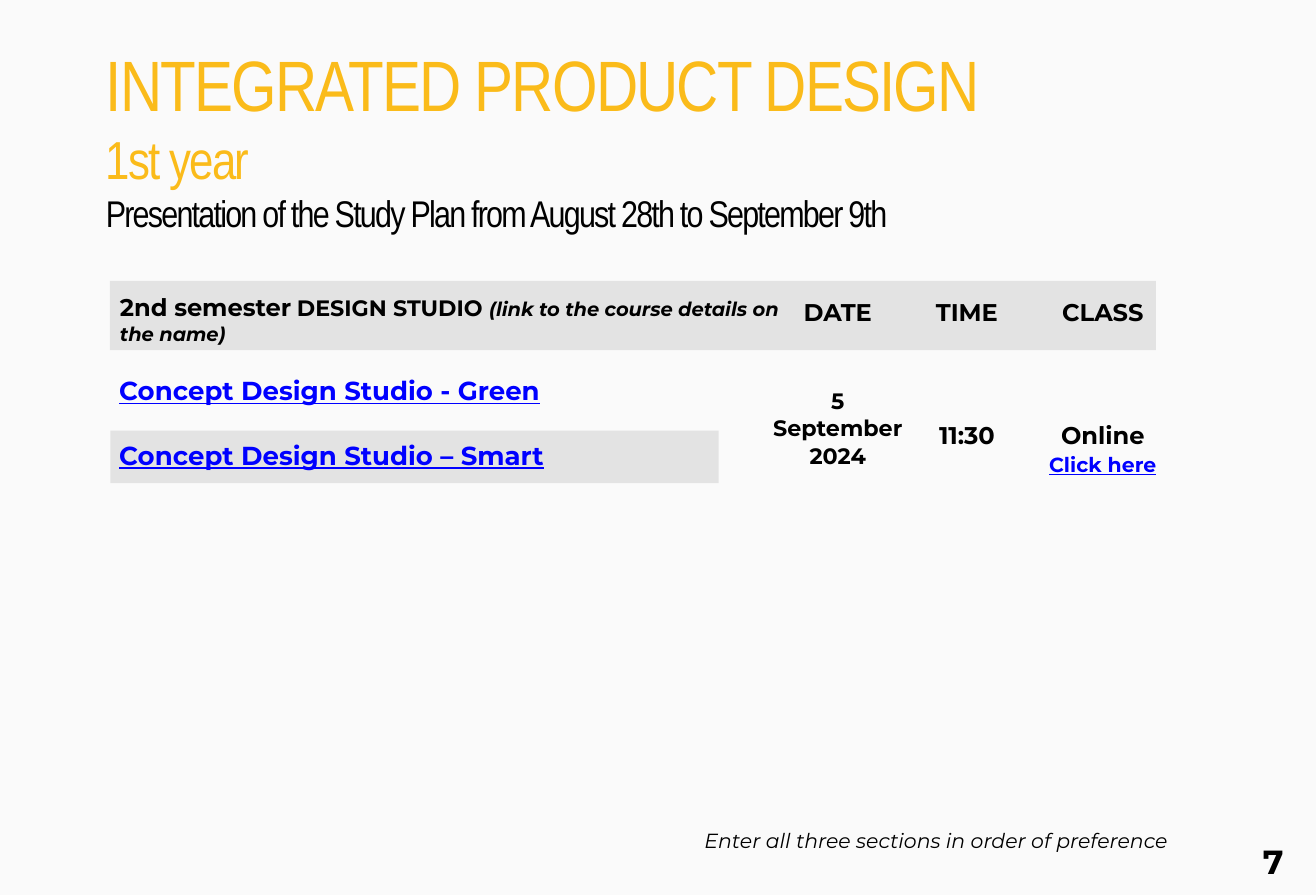
import pptx
import pptx.dml.color
import pptx.enum.shapes
import pptx.enum.text
import pptx.util
from dataclasses import dataclass, field

Align = pptx.enum.text.PP_ALIGN
Anchor = pptx.enum.text.MSO_ANCHOR


# Colours, fonts and type sizes
@dataclass(frozen=True)
class Theme:
    paper: str = "FAFAFA"
    band: str = "E3E3E3"
    gold: str = "FABB1A"
    ink: str = "000000"
    link: str = "0000FF"
    head: str = "Arial Narrow"
    body: str = "Montserrat"
    title: float = 38.4
    year: float = 28.8
    plan: float = 20
    page: float = 18
    course: float = 14
    label: float = 13
    text: float = 12
    small: float = 11
    hint: float = 10.5


THEME = Theme()


# Boxes are left, top, width, height in percent of the slide
@dataclass
class Box:
    left: float
    top: float
    width: float
    height: float


@dataclass
class Run:
    text: str
    size: float
    color: str = THEME.ink
    font: str = THEME.body
    form: dict = field(default_factory=lambda: {"bold": True})
    track: int = 0
    split: bool = False


@dataclass
class Para:
    runs: list[Run]
    before: float = 1


@dataclass
class Block:
    box: Box
    paras: list[Para]
    align: Align = Align.LEFT
    anchor: Anchor = Anchor.TOP


deck = pptx.Presentation()
deck.slide_width = pptx.util.Pt(709)
deck.slide_height = pptx.util.Pt(482)
slide = deck.slides.add_slide(deck.slide_layouts[6])


def rgb(code: str) -> pptx.dml.color.RGBColor:
    return pptx.dml.color.RGBColor.from_string(code)


def place(box: Box) -> list[int]:
    wide, high = deck.slide_width / 100, deck.slide_height / 100
    return [int(box.left * wide), int(box.top * high),
            int(box.width * wide), int(box.height * high)]


def draw_band(box: Box) -> None:
    rect = pptx.enum.shapes.MSO_SHAPE.RECTANGLE
    shape = slide.shapes.add_shape(rect, *place(box))
    shape.shadow.inherit = False
    shape.fill.solid()
    shape.fill.fore_color.rgb = rgb(THEME.band)
    shape.line.fill.background()


def draw_run(para, item: Run) -> None:
    if item.split:
        para.add_line_break()
    run = para.add_run()
    run.text = item.text
    look = {"size": pptx.util.Pt(item.size), "name": item.font, **item.form}
    for key, value in look.items():
        setattr(run.font, key, value)
    run.font.color.rgb = rgb(item.color)
    if item.track:
        run._r.get_or_add_rPr().set("spc", str(item.track))


def draw_block(block: Block) -> None:
    frame = slide.shapes.add_textbox(*place(block.box)).text_frame
    look = {"word_wrap": True, "vertical_anchor": block.anchor,
            "margin_left": 0, "margin_top": 0,
            "margin_right": 0, "margin_bottom": 0}
    for key, value in look.items():
        setattr(frame, key, value)
    for index, item in enumerate(block.paras):
        para = frame.add_paragraph() if index else frame.paragraphs[0]
        para.alignment = block.align
        para.space_before = pptx.util.Pt(item.before)
        for run in item.runs:
            draw_run(para, run)


def title(text: str, size: float, color: str, split: bool = True) -> Run:
    return Run(text, size, color, THEME.head, {}, -97, split)


def link(text: str, size: float) -> Run:
    return Run(text, size, THEME.link, form={"bold": True, "underline": True})


def course(text: str, top: float) -> Block:
    return Block(Box(9.05, top, 44.47, 3.59), [Para([link(text, THEME.course)])])


def column(left: float, width: float, height: float, name: str,
           paras: list[Para]) -> Block:
    label = Para([Run(name, THEME.label)])
    return Block(Box(left, 33.2, width, height), [label, *paras], Align.CENTER)


# Space between a column label and its values
GAP_DATE, GAP = 33, 51

BANDS = [Box(8.36, 31.38, 79.49, 7.75), Box(8.38, 48.12, 46.22, 5.88)]

BLOCKS = [
    # Title
    Block(Box(8.04, 3.92, 82.34, 22.87), [Para([
        title("INTEGRATED PRODUCT DESIGN", THEME.title, THEME.gold, False),
        title("1st year", THEME.year, THEME.gold),
        title("Presentation of the Study Plan from August 28th to September 9th",
              THEME.plan, THEME.ink),
    ], 0)], anchor=Anchor.MIDDLE),
    # Courses
    Block(Box(9.11, 32.69, 51.57, 5.98), [Para([
        Run("2nd semester", THEME.label),
        Run(" ", THEME.text, form={"italic": True}),
        Run("DESIGN STUDIO ", THEME.text),
        Run("(link to the course details on the name)", THEME.hint,
            form={"bold": True, "italic": True}),
    ])]),
    course("Concept Design Studio - Green", 41.85),
    course("Concept Design Studio – Smart", 49.08),
    # Schedule
    column(58.38, 10.56, 29.9, "DATE", [
        Para([Run("5 September", THEME.text)], GAP_DATE),
        Para([Run("2024", THEME.text)]),
    ]),
    column(68.19, 10.56, 27.65, "TIME", [Para([Run("11:30", THEME.label)], GAP)]),
    column(79.03, 9.54, 23.62, "CLASS", [
        Para([Run("Online", THEME.label)], GAP),
        Para([link("Click here", THEME.small)]),
    ]),
    # Footer
    Block(Box(33.75, 92.53, 55.03, 2.84), [Para([
        Run("Enter all three sections in order of preference", THEME.small,
            form={"italic": True}),
    ])], Align.RIGHT),
    Block(Box(95.96, 94.02, 2.64, 4.63), [Para([Run("7", THEME.page)], 2)]),
]


def main() -> None:
    slide.background.fill.solid()
    slide.background.fill.fore_color.rgb = rgb(THEME.paper)
    for box in BANDS:
        draw_band(box)
    for block in BLOCKS:
        draw_block(block)
    deck.save("out.pptx")


if __name__ == "__main__":
    main()
